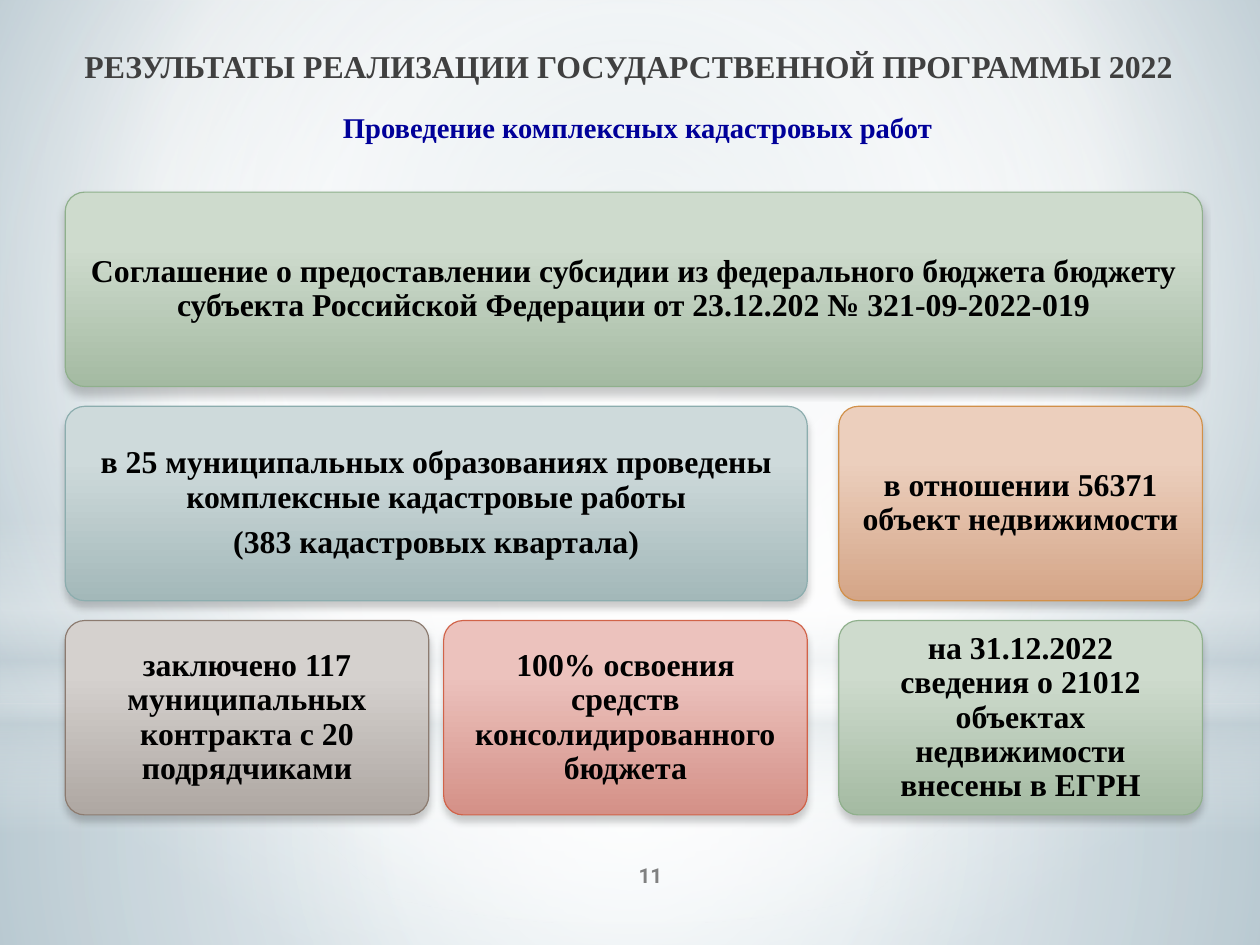
from pptx import Presentation
from pptx.dml.color import RGBColor
from pptx.enum.shapes import MSO_SHAPE
from pptx.enum.text import MSO_ANCHOR, MSO_AUTO_SIZE, PP_ALIGN
from pptx.oxml import parse_xml
from pptx.oxml.ns import nsdecls, qn
from pptx.util import Cm, Pt

RECTANGLE = MSO_SHAPE.RECTANGLE
ELLIPSE = MSO_SHAPE.OVAL
ROUNDED = MSO_SHAPE.ROUNDED_RECTANGLE
CENTER = PP_ALIGN.CENTER
TOP, MIDDLE = MSO_ANCHOR.TOP, MSO_ANCHOR.MIDDLE
NO_AUTO_SIZE = MSO_AUTO_SIZE.NONE
TITLE_ONLY = 5

SERIF = "Times New Roman"
SANS = "Roboto"

BLACK = RGBColor(0, 0, 0)
CHARCOAL = RGBColor(0x40, 0x40, 0x40)
NAVY = RGBColor(0, 0, 0x99)
GRAY = RGBColor(0x80, 0x80, 0x80)
WHITE = RGBColor(0xFF, 0xFF, 0xFF)
MIST = RGBColor(0xC5, 0xD1, 0xD7)
SKY = RGBColor(0xB8, 0xCA, 0xD3)
STEEL = RGBColor(0x8F, 0xAE, 0xBD)

GREEN = (RGBColor(0xCE, 0xDB, 0xCD), RGBColor(0xA4, 0xBA, 0xA2), RGBColor(0x8F, 0xB0, 0x8C))
TEAL = (RGBColor(0xCE, 0xDA, 0xDB), RGBColor(0xA3, 0xB8, 0xB9), RGBColor(0x8C, 0xAD, 0xAE))
TAUPE = (RGBColor(0xD5, 0xD1, 0xCE), RGBColor(0xAE, 0xA7, 0xA2), RGBColor(0x8C, 0x7B, 0x70))
RED = (RGBColor(0xEC, 0xC2, 0xBD), RGBColor(0xD4, 0x90, 0x87), RGBColor(0xD1, 0x63, 0x49))
ORANGE = (RGBColor(0xEC, 0xCF, 0xBD), RGBColor(0xD4, 0xA5, 0x87), RGBColor(0xD1, 0x90, 0x49))

SLIDE_WIDTH, SLIDE_HEIGHT = 28, 21
COLUMNS = (1.45, 9.86, 18.64)
ROW_TOP, ROW_PITCH = 4.27, 4.76
CARD_WIDTH, CARD_HEIGHT = 8.08, 4.32

LINEAR = '<a:lin ang="5400000" scaled="0"/>'
CARDS = (
    (0, 0, 2, GREEN, 7, ("Соглашение о предоставлении субсидии из федерального бюджета бюджету "
                         "субъекта Российской Федерации от 23.12.202 № 321-09-2022-019",)),
    (1, 0, 1, TEAL, 7, ("в 25 муниципальных образованиях проведены комплексные кадастровые работы",
                        "(383 кадастровых квартала)")),
    (1, 2, 2, ORANGE, 7, ("в отношении 56371 объект недвижимости",)),
    (2, 0, 0, TAUPE, 7, ("заключено 117 муниципальных контракта с 20 подрядчиками",)),
    (2, 1, 1, RED, 7, ("100% освоения средств консолидированного бюджета",)),
    (2, 2, 2, GREEN, 0, ("на 31.12.2022",
                         "сведения о 21012 объектах недвижимости внесены в ЕГРН")),
)


def radial(left=50, top=50, right=50, bottom=50):
    return (f'<a:path path="circle"><a:fillToRect l="{left * 1000}" t="{top * 1000}" '
            f'r="{right * 1000}" b="{bottom * 1000}"/></a:path>')


def set_gradient(fill, properties, stops, direction):
    fill.background()
    stop_list = "".join(
        f'<a:gs pos="{position * 1000}"><a:srgbClr val="{color}">'
        f'<a:alpha val="{opacity * 1000}"/></a:srgbClr></a:gs>'
        for position, color, opacity in stops)
    gradient = parse_xml(f'<a:gradFill {nsdecls("a")} rotWithShape="1">'
                         f'<a:gsLst>{stop_list}</a:gsLst>{direction}</a:gradFill>')
    properties.replace(properties.find(qn("a:noFill")), gradient)


def add_gradient_shape(slide, kind, box, stops, direction):
    shape = slide.shapes.add_shape(kind, *map(Cm, box))
    shape.shadow.inherit = False
    shape.line.fill.background()
    set_gradient(shape.fill, shape._element.spPr, stops, direction)
    return shape


def write_text(shape, lines, size, color, font=SERIF, spacing=1.0, after=0,
               anchor=MIDDLE, insets=(0.25, 0.13)):
    frame = shape.text_frame
    frame.word_wrap = True
    frame.auto_size = NO_AUTO_SIZE
    frame.vertical_anchor = anchor
    frame.margin_left = frame.margin_right = Cm(insets[0])
    frame.margin_top = frame.margin_bottom = Cm(insets[1])
    frame.text = "\n".join(lines)
    for paragraph in frame.paragraphs:
        paragraph.alignment = CENTER
        paragraph.line_spacing = spacing
        paragraph.space_before = Pt(0)
        paragraph.space_after = Pt(after)
        paragraph.font.name = font
        paragraph.font.size = Pt(size)
        paragraph.font.bold = True
        paragraph.font.color.rgb = color


def add_background(slide):
    background_fill = slide.background.fill
    background_fill.background()
    set_gradient(background_fill, slide.element.xpath(".//p:bgPr")[0],
                 ((0, SKY, 100), (60, WHITE, 100), (100, STEEL, 100)),
                 radial(20, 10, 20, 60))
    horizon = 15.63
    add_gradient_shape(slide, RECTANGLE, (0, horizon, SLIDE_WIDTH, SLIDE_HEIGHT - horizon),
                       ((0, WHITE, 91), (37, WHITE, 76), (100, MIST, 79)), radial())
    add_gradient_shape(slide, RECTANGLE, (0, 0, SLIDE_WIDTH, horizon),
                       ((0, WHITE, 89), (48, WHITE, 62), (100, MIST, 79)), radial())
    add_gradient_shape(slide, RECTANGLE, (0, 11.53, SLIDE_WIDTH, 7),
                       ((0, WHITE, 0), (29, WHITE, 30), (45, MIST, 40),
                        (55, WHITE, 26), (65, MIST, 60), (100, WHITE, 0)), LINEAR)
    add_gradient_shape(slide, ELLIPSE, (0, 4.9, SLIDE_WIDTH, horizon),
                       ((0, WHITE, 100), (56, WHITE, 0)), radial())


def add_title(slide, text):
    title = slide.shapes.title
    slide.shapes._spTree.append(title._element)
    title.left, title.top, title.width, title.height = map(Cm, (1.45, 1, 25.04, 1.7))
    write_text(title, (text,), 20, CHARCOAL, spacing=0.87, anchor=TOP, insets=(0.28, 0.15))


def add_label(slide, box, text, size, color, **style):
    label = slide.shapes.add_textbox(*map(Cm, box))
    write_text(label, (text,), size, color, **style)


def add_card(slide, row, first, last, palette, after, lines):
    light, dark, outline = palette
    box = (COLUMNS[first], ROW_TOP + row * ROW_PITCH,
           COLUMNS[last] + CARD_WIDTH - COLUMNS[first], CARD_HEIGHT)
    card = add_gradient_shape(slide, ROUNDED, box,
                              ((28, light, 100), (100, dark, 100)), LINEAR)
    card.adjustments[0] = 0.1
    card.line.color.rgb = outline
    card.line.width = Pt(0.75)
    shadow = parse_xml(
        f'<a:outerShdw {nsdecls("a")} blurRad="{Pt(5)}" dist="{Pt(4)}" dir="5400000" '
        f'rotWithShape="0"><a:srgbClr val="{BLACK}"><a:alpha val="20000"/>'
        '</a:srgbClr></a:outerShdw>')
    card._element.spPr.find(qn("a:effectLst")).append(shadow)
    write_text(card, lines, 20, BLACK, spacing=0.9, after=after, insets=(0.2, 0.2))


def main():
    presentation = Presentation()
    presentation.slide_width = Cm(SLIDE_WIDTH)
    presentation.slide_height = Cm(SLIDE_HEIGHT)
    slide = presentation.slides.add_slide(presentation.slide_layouts[TITLE_ONLY])
    add_background(slide)
    add_title(slide, "РЕЗУЛЬТАТЫ РЕАЛИЗАЦИИ ГОСУДАРСТВЕННОЙ ПРОГРАММЫ 2022")
    add_label(slide, (1.85, 2.41, 24.64, 0.91), "Проведение комплексных кадастровых работ",
              18, NAVY, spacing=0.87, anchor=TOP)
    for card in CARDS:
        add_card(slide, *card)
    add_label(slide, (11.66, 18.9, 5.59, 1.12), "11", 13, GRAY, font=SANS)
    presentation.save("out.pptx")


if __name__ == "__main__":
    main()
